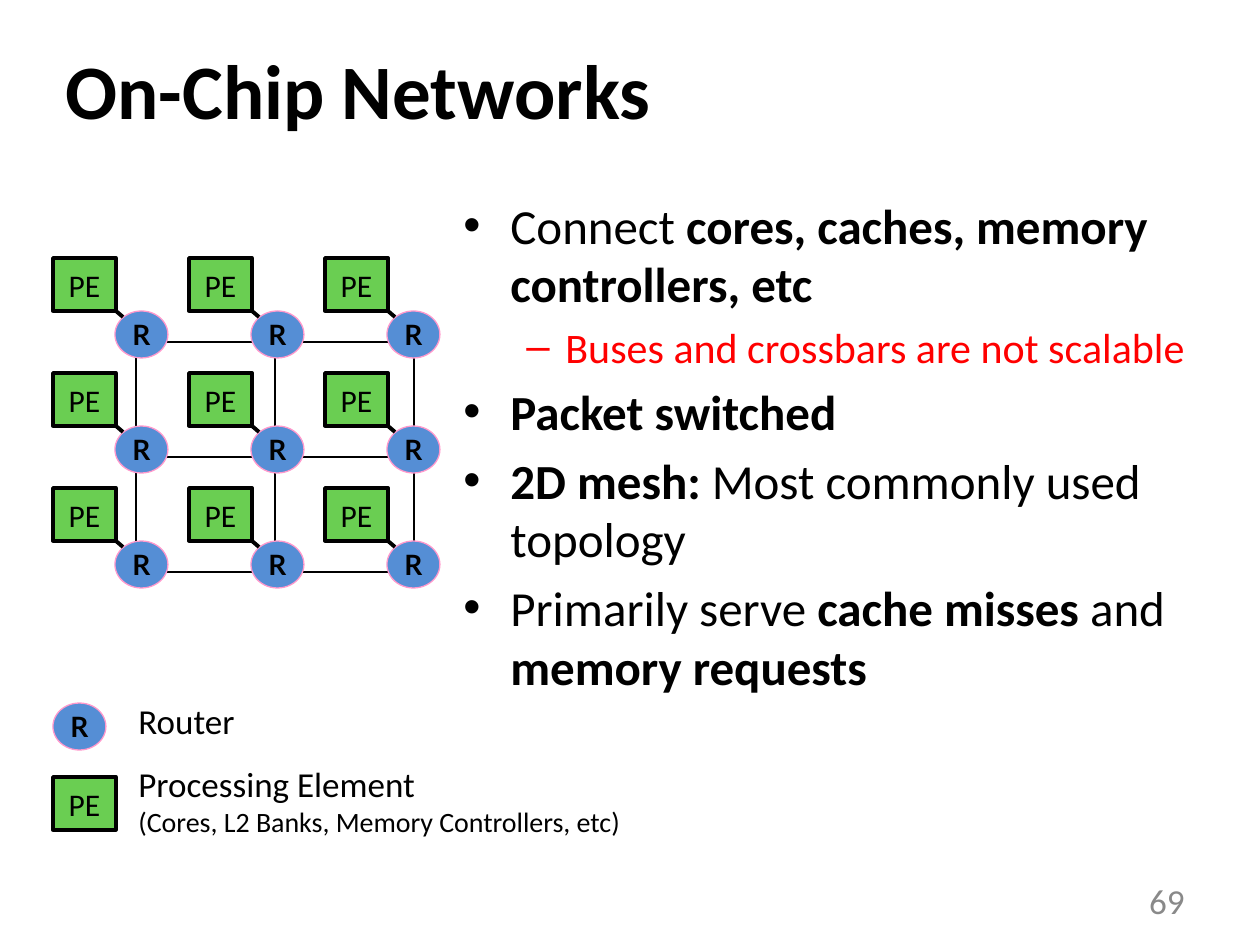
from dataclasses import dataclass
from itertools import product
from typing import NamedTuple

from lxml import etree
from pptx import Presentation
from pptx import util as u
from pptx.dml.color import RGBColor
from pptx.enum import shapes, text
from pptx.oxml import ns


@dataclass(frozen=True)
class Theme:
    font: str = "Calibri"
    router_font: str = "Lato"
    ink: str = "000000"
    accent: str = "FF0000"
    muted: str = "898989"
    router_fill: str = "558ED5"
    router_line: str = "FF99CC"
    element_fill: str = "6ACE52"
    title: int = 44
    bullet: int = 28
    sub_bullet: int = 24
    label: int = 20
    element: int = 18
    small: int = 16


class Span(NamedTuple):
    words: str
    size: int
    bold: bool = False
    color: str = "000000"
    font: str = "Calibri"


class Area(NamedTuple):
    left: int
    top: int
    width: int
    height: int


class Bullet(NamedTuple):
    level: int
    spans: list[Span]


class BulletStyle(NamedTuple):
    mark: str
    margin: int
    hang: int


THEME = Theme()
PX = u.Inches(1) / 126
PITCH_X, PITCH_Y, MESH_SIZE = 136, 115, 3
MESH_LEFT, MESH_TOP = 53, 258
LINKS = Area(136, 342, 278, 230)
STYLES = [BulletStyle("•", 47, 47), BulletStyle("–", 102, 39)]


def px(count: int) -> int:
    return round(count * PX)


def place(area: Area) -> list[int]:
    return [px(length) for length in area]


def rgb(color: str) -> RGBColor:
    return RGBColor.from_string(color)


def add_spans(para, spans: list[Span]) -> None:
    for item in spans:
        span = para.add_run()
        span.text = item.words
        span.font.name = item.font
        span.font.size = u.Pt(item.size)
        span.font.bold = item.bold
        span.font.color.rgb = rgb(item.color)


def add_label(parent, area: Area, lines: list[Span], wrap: bool = False):
    box = parent.shapes.add_textbox(*place(area))
    frame = box.text_frame
    frame.word_wrap = wrap
    for index, line in enumerate(lines):
        para = frame.add_paragraph() if index else frame.paragraphs[0]
        add_spans(para, [line])
    return box


def add_node(parent, kind, area: Area, fill: str, line: str, weight: float, label: Span) -> None:
    node = parent.shapes.add_shape(kind, *place(area))
    node.shadow.inherit = False
    node.fill.solid()
    node.fill.fore_color.rgb = rgb(fill)
    node.line.color.rgb = rgb(line)
    node.line.width = u.Pt(weight)
    frame = node.text_frame
    frame.word_wrap = False
    frame.margin_left = frame.margin_right = frame.margin_top = frame.margin_bottom = 0
    frame.vertical_anchor = text.MSO_ANCHOR.MIDDLE
    frame.paragraphs[0].alignment = text.PP_ALIGN.CENTER
    add_spans(frame.paragraphs[0], [label])


def add_router(parent, left: int, top: int) -> None:
    add_node(parent, shapes.MSO_SHAPE.OVAL, Area(left, top, 53, 47), THEME.router_fill,
             THEME.router_line, 0.75, Span("R", THEME.small, True, font=THEME.router_font))


def add_element(parent, left: int, top: int) -> None:
    add_node(parent, shapes.MSO_SHAPE.RECTANGLE, Area(left, top, 63, 53), THEME.element_fill,
             THEME.ink, 2, Span("PE", THEME.element))


def add_tile(page, left: int, top: int) -> None:
    tile = page.shapes.add_group_shape()
    add_router(tile, left + 62, top + 53)
    add_element(tile, left, top)
    link = tile.shapes.add_connector(shapes.MSO_CONNECTOR.STRAIGHT, px(left + 63), px(top + 53),
                                     px(left + 70), px(top + 59))
    link.line.color.rgb = rgb(THEME.ink)
    link.line.width = u.Pt(2.25)
    etree.SubElement(link._element.spPr, ns.qn("a:effectLst"))


def add_links(page) -> None:
    count = MESH_SIZE - 1
    table = page.shapes.add_table(count, count, *place(LINKS)).table
    table.first_row = table.horz_banding = False
    for cell in table.iter_cells():
        cell.fill.background()
        properties = cell._tc.get_or_add_tcPr()
        for index, side in enumerate(("lnL", "lnR", "lnT", "lnB")):
            border = etree.Element(ns.qn(f"a:{side}"), w=str(u.Pt(1.5)))
            fill = etree.SubElement(border, ns.qn("a:solidFill"))
            etree.SubElement(fill, ns.qn("a:srgbClr"), val=THEME.ink)
            properties.insert(index, border)


def add_legend(page) -> None:
    legend = page.shapes.add_group_shape()
    add_router(legend, 53, 703)
    add_label(legend, Area(126, 693, 122, 55), [Span("Router", THEME.label)])
    add_label(legend, Area(126, 756, 513, 89), [
        Span("Processing Element", THEME.label),
        Span("(Cores, L2 Banks, Memory Controllers, etc)", THEME.small),
    ])
    add_element(legend, 53, 777)


def add_bullets(page, area: Area, bullets: list[Bullet]) -> None:
    frame = page.shapes.add_textbox(*place(area)).text_frame
    frame.word_wrap = True
    for index, bullet in enumerate(bullets):
        para = frame.add_paragraph() if index else frame.paragraphs[0]
        style = STYLES[bullet.level]
        para.level = bullet.level
        para.space_before = u.Pt(bullet.spans[0].size * 0.2)
        properties = para._p.get_or_add_pPr()
        properties.set("marL", str(px(style.margin)))
        properties.set("indent", str(-px(style.hang)))
        etree.SubElement(properties, ns.qn("a:buFont"), typeface="Arial")
        etree.SubElement(properties, ns.qn("a:buChar"), char=style.mark)
        add_spans(para, bullet.spans)


def add_title(page) -> None:
    title = page.shapes.title
    title.left, title.top, title.width, title.height = place(Area(53, 10, 1134, 158))
    frame = title.text_frame
    frame.auto_size = text.MSO_AUTO_SIZE.NONE
    frame.vertical_anchor = text.MSO_ANCHOR.MIDDLE
    frame.paragraphs[0].alignment = text.PP_ALIGN.LEFT
    add_spans(frame.paragraphs[0], [Span("On-Chip Networks", THEME.title, True)])


def main() -> None:
    deck = Presentation()
    deck.slide_width, deck.slide_height = px(1260), px(945)
    page = deck.slides.add_slide(deck.slide_layouts[5])
    add_title(page)
    number = add_label(page, Area(903, 876, 294, 50),
                       [Span("69", THEME.label, color=THEME.muted)], wrap=True)
    number.text_frame.vertical_anchor = text.MSO_ANCHOR.MIDDLE
    number.text_frame.paragraphs[0].alignment = text.PP_ALIGN.RIGHT
    add_links(page)
    for row, column in product(range(MESH_SIZE), repeat=2):
        add_tile(page, MESH_LEFT + column * PITCH_X, MESH_TOP + row * PITCH_Y)
    add_legend(page)
    size = THEME.bullet
    add_bullets(page, Area(451, 189, 788, 557), [
        Bullet(0, [Span("Connect ", size), Span("cores, caches, memory controllers, etc", size, True)]),
        Bullet(1, [Span("Buses and crossbars are not scalable", THEME.sub_bullet, color=THEME.accent)]),
        Bullet(0, [Span("Packet switched", size, True)]),
        Bullet(0, [Span("2D mesh: ", size, True), Span("Most commonly used topology", size)]),
        Bullet(0, [Span("Primarily serve ", size), Span("cache misses ", size, True),
                   Span("and", size), Span(" memory requests", size, True)]),
    ])
    deck.save("out.pptx")


if __name__ == "__main__":
    main()
